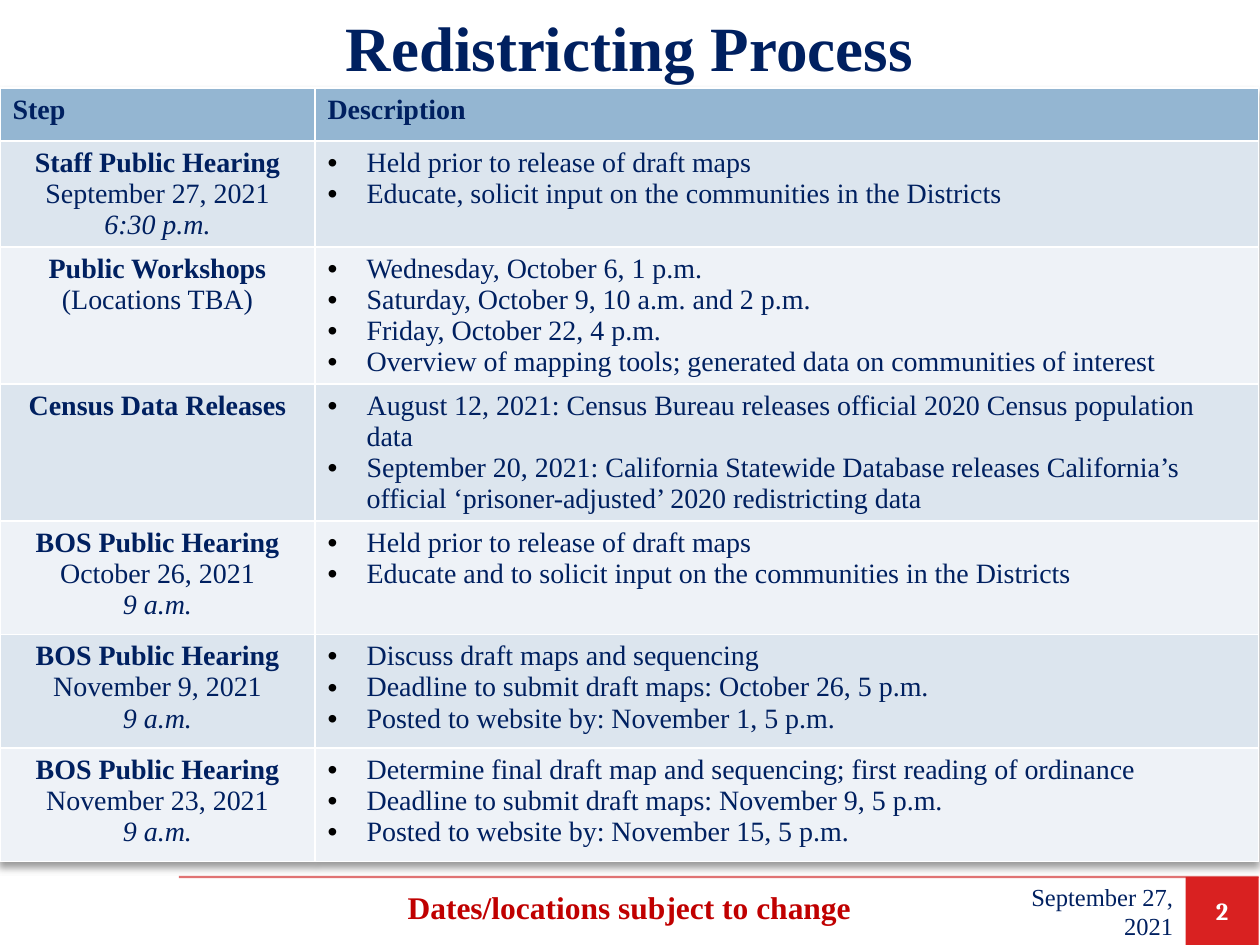
from dataclasses import dataclass

from lxml import etree
from pptx import Presentation
from pptx.dml.color import RGBColor
from pptx.enum.shapes import MSO_CONNECTOR, MSO_SHAPE
from pptx.enum.text import MSO_ANCHOR, PP_ALIGN
from pptx.oxml.ns import qn
from pptx.util import Inches, Pt

LEFT, CENTER, RIGHT = PP_ALIGN.LEFT, PP_ALIGN.CENTER, PP_ALIGN.RIGHT
TOP, MIDDLE = MSO_ANCHOR.TOP, MSO_ANCHOR.MIDDLE
RECT = MSO_SHAPE.RECTANGLE
STRAIGHT = MSO_CONNECTOR.STRAIGHT


@dataclass(frozen=True)
class Theme:
    navy: str = "002060"
    head: str = "94B6D2"
    bands: tuple = ("DCE5EE", "EEF2F7")
    note: str = "C00000"
    rule: str = "C80000"
    badge: str = "D92121"
    white: str = "FFFFFF"
    black: str = "000000"
    font: str = "Times New Roman"
    serif: str = "Cambria"
    title: int = 36
    strong: int = 18
    body: int = 16
    small: int = 14


THEME = Theme()
COLS = (2.5, 7.49)
ROWS = (0.42, 0.72, 0.65, 0.9, 0.9, 0.9, 0.9)
STEP_STYLES = ({"bold": True}, {}, {"italic": True})
STEPS = [
    (("Staff Public Hearing", "September 27, 2021", "6:30 p.m."),
     ("Held prior to release of draft maps",
      "Educate, solicit input on the communities in the Districts")),
    (("Public Workshops", "(Locations TBA)"),
     ("Wednesday, October 6, 1 p.m.",
      "Saturday, October 9, 10 a.m. and 2 p.m.",
      "Friday, October 22, 4 p.m.",
      "Overview of mapping tools; generated data on communities of interest")),
    (("Census Data Releases",),
     ("August 12, 2021: Census Bureau releases official 2020 Census population data",
      "September 20, 2021: California Statewide Database releases California’s "
      "official ‘prisoner-adjusted’ 2020 redistricting data")),
    (("BOS Public Hearing", "October 26, 2021", "9 a.m."),
     ("Held prior to release of draft maps",
      "Educate and to solicit input on the communities in the Districts")),
    (("BOS Public Hearing", "November 9, 2021", "9 a.m."),
     ("Discuss draft maps and sequencing",
      "Deadline to submit draft maps: October 26, 5 p.m.",
      "Posted to website by: November 1, 5 p.m.")),
    (("BOS Public Hearing", "November 23, 2021", "9 a.m."),
     ("Determine final draft map and sequencing; first reading of ordinance",
      "Deadline to submit draft maps: November 9, 5 p.m.",
      "Posted to website by: November 15, 5 p.m.")),
]


def add(parent, tag, **attrs):
    return etree.SubElement(parent, qn(tag), attrs)


def paint(fill, color):
    fill.solid()
    fill.fore_color.rgb = RGBColor.from_string(color)


def write(para, text, align=LEFT, color=THEME.navy, size=THEME.body, **style):
    """Put one formatted run in a paragraph."""
    para.alignment = align
    run = para.add_run()
    run.text = text
    look = {"name": THEME.font, "size": Pt(size), "bold": False, "italic": False}
    for key, value in (look | style).items():
        setattr(run.font, key, value)
    run.font.color.rgb = RGBColor.from_string(color)


def lines(frame, count):
    """Give the frame's paragraphs, adding as many as are needed."""
    return [frame.paragraphs[0]] + [frame.add_paragraph() for _ in range(count - 1)]


def bullet(para):
    props = para._p.get_or_add_pPr()
    indent = Inches(0.31)
    props.set("marL", str(indent))
    props.set("indent", str(-indent))
    add(add(props, "a:buClr"), "a:srgbClr", val=THEME.black)
    add(props, "a:buFont", typeface="Arial")
    add(props, "a:buChar", char="•")


def label(slide, box, text, anchor=MIDDLE, **style):
    frame = slide.shapes.add_textbox(*map(Inches, box)).text_frame
    frame.word_wrap = True
    frame.vertical_anchor = anchor
    write(frame.paragraphs[0], text, **style)


def shade(table):
    """Cast a soft shadow below the table."""
    effects = etree.Element(qn("a:effectLst"))
    cast = add(effects, "a:outerShdw", blurRad=str(Pt(4)), dist=str(Pt(3)),
               dir="5400000", algn="t", rotWithShape="0")
    add(add(cast, "a:prstClr", val="black"), "a:alpha", val="40000")
    table._tbl.tblPr.insert(0, effects)


def schedule(slide, box):
    table = slide.shapes.add_table(len(ROWS), len(COLS), *map(Inches, box)).table
    for col, width in zip(table.columns, COLS):
        col.width = Inches(width)
    for row, height in zip(table.rows, ROWS):
        row.height = Inches(height)
    for col, text in enumerate(("Step", "Description")):
        cell = table.cell(0, col)
        paint(cell.fill, THEME.head)
        write(cell.text_frame.paragraphs[0], text, bold=True)
    for row, (step, notes) in enumerate(STEPS, 1):
        left, right = table.cell(row, 0), table.cell(row, 1)
        for cell in (left, right):
            paint(cell.fill, THEME.bands[(row - 1) % 2])
        paras = lines(left.text_frame, len(step))
        for para, text, style in zip(paras, step, STEP_STYLES):
            write(para, text, CENTER, **style)
        for para, text in zip(lines(right.text_frame, len(notes)), notes):
            bullet(para)
            write(para, text)
    shade(table)


def footer(slide, box):
    x, y, width, height = box
    end = x + width
    side, date = 0.58, 1.74

    rule = slide.shapes.add_connector(
        STRAIGHT, *map(Inches, (x + 1.42, y, end, y)))
    rule.line.width = Pt(1.25)
    paint(rule.line.fill, THEME.rule)
    tint = rule.line._ln.find(".//" + qn("a:srgbClr"))
    add(tint, "a:alpha", val="55000")
    add(rule._element.spPr, "a:effectLst")

    badge = slide.shapes.add_shape(
        RECT, *map(Inches, (end - side, y, side, height)))
    badge.shadow.inherit = False
    paint(badge.fill, THEME.badge)
    badge.line.fill.background()
    badge.text_frame.vertical_anchor = MIDDLE
    write(badge.text_frame.paragraphs[0], "2", CENTER, THEME.white,
          THEME.small, name=THEME.serif, bold=True)

    label(slide, (end - side - date, y, date, height), "September 27, 2021",
          align=RIGHT, size=THEME.small)
    label(slide, (x, y + 0.04, width, 0.4), "Dates/locations subject to change",
          TOP, align=CENTER, color=THEME.note, size=THEME.strong, bold=True)


def main():
    deck = Presentation()
    deck.slide_width, deck.slide_height = Inches(10), Inches(7.5)
    slide = deck.slides.add_slide(deck.slide_layouts[6])
    paint(slide.background.fill, THEME.white)
    schedule(slide, (0, 0.7, 9.99, 6.1))
    label(slide, (0, -0.17, 9.99, 1.08), "Redistricting Process",
          align=CENTER, size=THEME.title, bold=True)
    footer(slide, (0, 6.96, 9.99, 0.54))
    deck.save("out.pptx")


if __name__ == "__main__":
    main()
